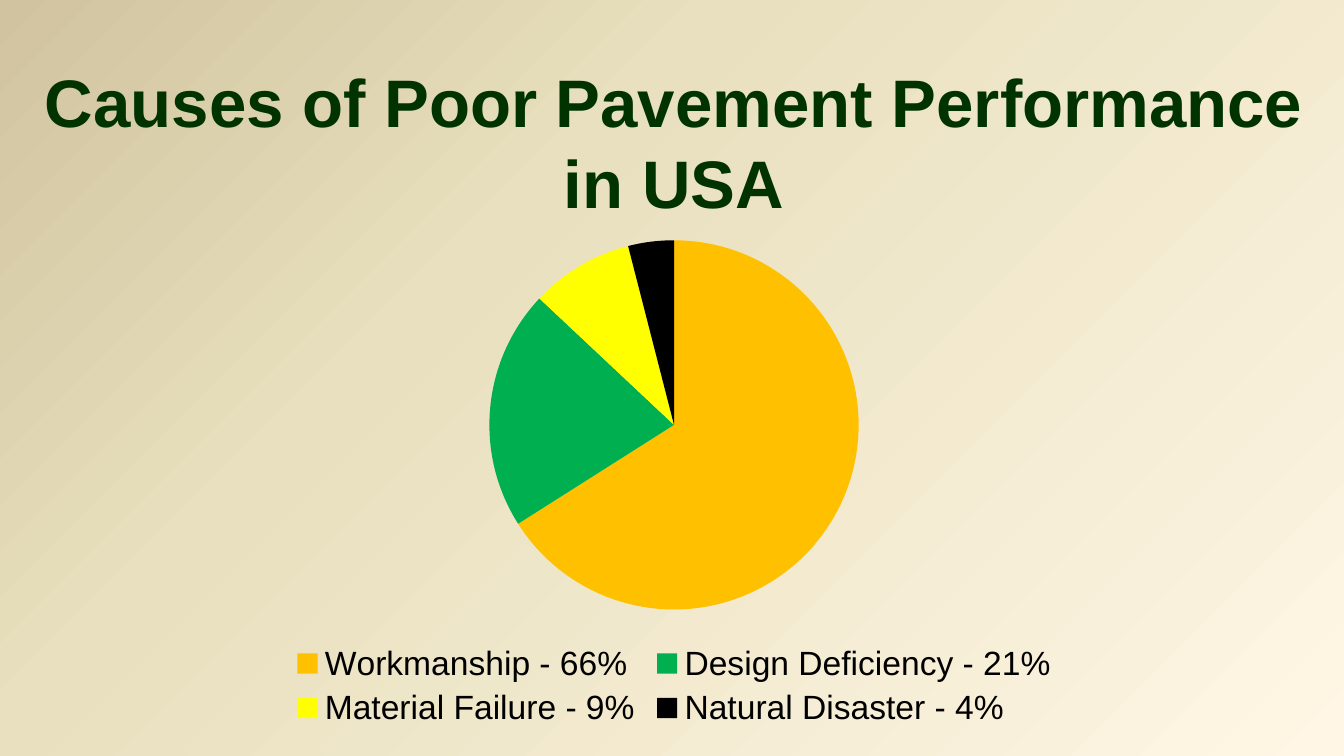
"""Build a slide with a pie chart of the causes of poor pavement performance."""
import lxml.etree
import pptx
import pptx.chart.data
import pptx.dml.color
import pptx.enum.chart
import pptx.enum.text
import pptx.oxml
import pptx.oxml.ns
import pptx.util

Pt = pptx.util.Pt
RGB = pptx.dml.color.RGBColor

FONT = "Arial"
GREEN = RGB(0x00, 0x33, 0x00)
BLACK = RGB(0x00, 0x00, 0x00)
CREAM = RGB(0xFF, 0xF6, 0xE5)
SAND = RGB(0xE8, 0xE0, 0xBE)
TAN = RGB(0xD1, 0xC3, 0x9F)
STOPS = [(0, CREAM), (65, SAND), (100, TAN)]
TITLE = ["Causes of Poor Pavement Performance", "in USA"]
CAUSES = [
    ("Workmanship", 66, RGB(0xFF, 0xC0, 0x00)),
    ("Design Deficiency", 21, RGB(0x00, 0xB0, 0x50)),
    ("Material Failure", 9, RGB(0xFF, 0xFF, 0x00)),
    ("Natural Disaster", 4, BLACK),
]


def paint_back(slide):
    fill = slide.background.fill
    fill.solid()
    stops = "".join(
        f'<a:gs pos="{pos * 1000}"><a:srgbClr val="{color}"/></a:gs>'
        for pos, color in STOPS
    )
    grad = pptx.oxml.parse_xml(
        f'<a:gradFill {pptx.oxml.ns.nsdecls("a")} rotWithShape="1">'
        f"<a:gsLst>{stops}</a:gsLst>"
        '<a:path path="circle"><a:fillToRect l="100000" t="100000"/></a:path>'
        '<a:tileRect r="-100000" b="-100000"/></a:gradFill>'
    )
    solid = slide.background._cSld.find(".//" + pptx.oxml.ns.qn("a:solidFill"))
    solid.getparent().replace(solid, grad)


def add_pie(slide, left, top, width, height):
    data = pptx.chart.data.CategoryChartData()
    data.categories = [f"{name} - {share}%" for name, share, color in CAUSES]
    data.add_series("Series 1", [share for name, share, color in CAUSES])
    kind = pptx.enum.chart.XL_CHART_TYPE.PIE
    frame = slide.shapes.add_chart(
        kind, Pt(left), Pt(top), Pt(width), Pt(height), data
    )
    chart = frame.chart
    chart.has_title = False
    chart.font.name = FONT
    chart.font.size = Pt(18)
    chart.font.color.rgb = BLACK
    chart.has_legend = True
    chart.legend.position = pptx.enum.chart.XL_LEGEND_POSITION.BOTTOM
    chart.legend.include_in_layout = False
    plot = chart.plots[0]
    plot.vary_by_categories = True
    for index, (name, share, color) in enumerate(CAUSES):
        fill = plot.series[0].points[index].format.fill
        fill.solid()
        fill.fore_color.rgb = color


def add_title(slide, left, top, width, height):
    box = slide.shapes.add_textbox(Pt(left), Pt(top), Pt(width), Pt(height))
    frame = box.text_frame
    frame.word_wrap = False
    frame.auto_size = pptx.enum.text.MSO_AUTO_SIZE.SHAPE_TO_FIT_TEXT
    for index, line in enumerate(TITLE):
        para = frame.add_paragraph() if index else frame.paragraphs[0]
        para.alignment = pptx.enum.text.PP_ALIGN.CENTER
        run = para.add_run()
        run.text = line
        run.font.name = FONT
        run.font.size = Pt(36)
        run.font.bold = True
        run.font.color.rgb = GREEN


def main():
    deck = pptx.Presentation()
    deck.slide_width, deck.slide_height = Pt(720), Pt(405)
    slide = deck.slides.add_slide(deck.slide_layouts[6])
    paint_back(slide)
    add_pie(slide, 25.2, 118.8, 671.8, 274.3)
    add_title(slide, 13.7, 28.8, 694.8, 94.3)
    deck.save("out.pptx")


if __name__ == "__main__":
    main()
